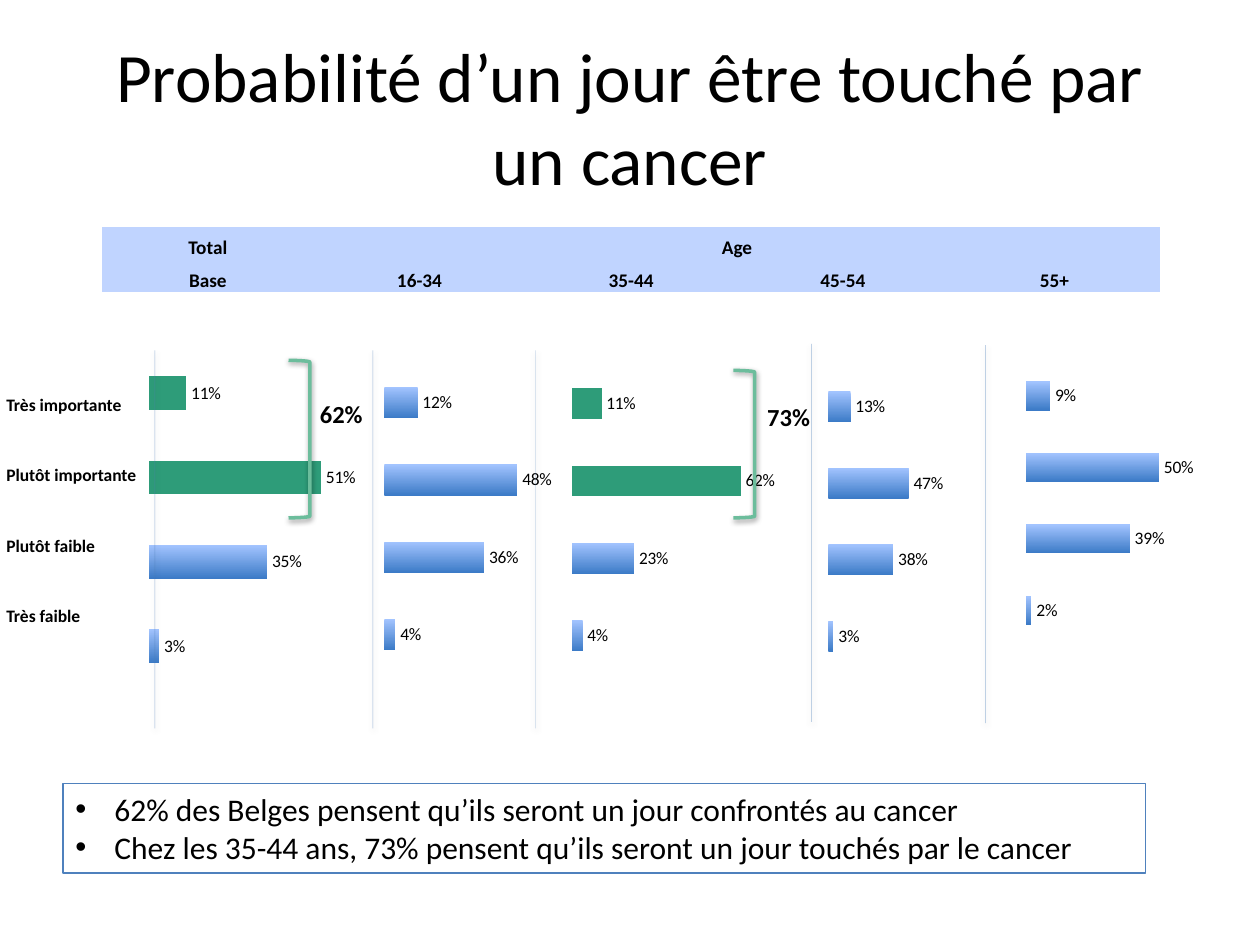
from dataclasses import dataclass
from lxml.etree import SubElement
from pptx import Presentation
from pptx.chart.data import CategoryChartData
from pptx.dml.color import RGBColor
from pptx.enum.chart import XL_CHART_TYPE, XL_LABEL_POSITION
from pptx.enum.shapes import MSO_CONNECTOR, MSO_SHAPE
from pptx.enum.text import MSO_ANCHOR, PP_ALIGN
from pptx.oxml import parse_xml
from pptx.oxml.ns import nsdecls, qn
from pptx.util import Inches, Pt


@dataclass
class Theme:
    font: str = "Calibri"
    ink: str = "000000"
    white: str = "FFFFFF"
    band: str = "C0D4FF"
    blue: str = "4F81BD"
    light: str = "A3C4FF"
    deep: str = "3C7BC7"
    green: str = "2E9C79"
    mint: str = "6CBD9C"
    title: float = 39.6
    body: float = 18
    total: float = 14
    head: float = 11
    small: float = 10


def assign(item, values):
    for name, value in values.items():
        setattr(item, name, value)


def color(code):
    return RGBColor.from_string(code)


def lengths(values):
    return [Inches(value) for value in values]


class Deck:
    def __init__(self, slide, theme):
        self.slide = slide
        self.theme = theme

    def style(self, font, size, bold=False):
        assign(font, {"name": self.theme.font, "size": Pt(size), "bold": bold})
        font.color.rgb = color(self.theme.ink)

    def label(self, frame, lines, size, bold=False, align=PP_ALIGN.LEFT):
        frame.text = "\n".join(lines)
        for para in frame.paragraphs:
            para.alignment = align
            self.style(para.runs[0].font, size, bold)

    def text(self, place, words, size, bold=False, align=PP_ALIGN.LEFT,
             anchor=MSO_ANCHOR.TOP):
        frame = self.slide.shapes.add_textbox(*lengths(place)).text_frame
        assign(frame, {"word_wrap": True, "vertical_anchor": anchor})
        self.label(frame, [words], size, bold, align)

    def table(self, place, rows, size, fill, align):
        frame = self.slide.shapes.add_table(len(rows), len(rows[0]), *lengths(place))
        table = frame.table
        assign(table, {"first_row": False, "horz_banding": False})
        table._tbl.tblPr.find(qn("a:tableStyleId")).text = (
            "{2D5ABB26-0587-4C30-8999-92F81FD0307C}")
        pad = {"margin_left": Inches(0.01), "margin_right": Inches(0.01),
               "margin_top": Inches(0.01), "margin_bottom": 0,
               "vertical_anchor": MSO_ANCHOR.BOTTOM}
        for r, row in enumerate(rows):
            for c, words in enumerate(row):
                cell = table.cell(r, c)
                assign(cell, pad)
                cell.fill.solid()
                cell.fill.fore_color.rgb = color(fill)
                if words:
                    self.label(cell.text_frame, [words], size, True, align)
        return table

    def chart(self, place, plot, values, top, marked):
        data = CategoryChartData()
        data.categories = ["1", "2", "3", "4"]
        data.add_series("Series 1", values)
        chart = self.slide.shapes.add_chart(
            XL_CHART_TYPE.BAR_CLUSTERED, *lengths(place), data).chart
        assign(chart, {"has_legend": False, "has_title": False})
        self.style(chart.font, self.theme.small)
        assign(chart.category_axis, {"visible": False, "reverse_order": True})
        assign(chart.value_axis, {
            "visible": False, "has_major_gridlines": False,
            "minimum_scale": 0, "maximum_scale": top})
        bars = chart.plots[0]
        assign(bars, {"gap_width": 150, "vary_by_categories": False,
                      "has_data_labels": True})
        assign(bars.data_labels, {
            "show_value": True, "number_format": "0\\%",
            "number_format_is_linked": False,
            "position": XL_LABEL_POSITION.OUTSIDE_END})
        series = bars.series[0]
        fill = series.format.fill
        fill.gradient()
        fill.gradient_angle = 270
        for stop, code in zip(fill.gradient_stops, (self.theme.light, self.theme.deep)):
            stop.color.rgb = color(code)
        for index in marked:
            fill = series.points[index].format.fill
            fill.solid()
            fill.fore_color.rgb = color(self.theme.green)
        self.layout(chart, plot)

    def layout(self, chart, plot):
        area = chart._chartSpace.chart.plotArea
        for old in area.findall(qn("c:layout")):
            area.remove(old)
        sizes = "".join(f'<c:{key} val="{value}"/>' for key, value in zip("xywh", plot))
        area.insert(0, parse_xml(
            f'<c:layout {nsdecls("c")}><c:manualLayout><c:layoutTarget val="inner"/>'
            f'<c:xMode val="edge"/><c:yMode val="edge"/>{sizes}'
            "</c:manualLayout></c:layout>"))

    def shade(self, shape):
        shape._element.spPr.append(parse_xml(
            f'<a:effectLst {nsdecls("a")}><a:outerShdw blurRad="40000" dist="20000" '
            'dir="5400000" rotWithShape="0"><a:srgbClr val="000000">'
            '<a:alpha val="38000"/></a:srgbClr></a:outerShdw></a:effectLst>'))

    def stroke(self, shape, code, width):
        shape.line.color.rgb = color(code)
        shape.line.width = Pt(width)

    def rule(self, x, top, bottom):
        line = self.slide.shapes.add_connector(
            MSO_CONNECTOR.STRAIGHT, *lengths((x, top, x, bottom)))
        self.stroke(line, self.theme.blue, 0.25)
        tint = line._element.spPr.find(".//" + qn("a:srgbClr"))
        SubElement(tint, qn("a:alpha")).set("val", "52000")
        self.shade(line)

    def bracket(self, place):
        shape = self.slide.shapes.add_shape(MSO_SHAPE.RIGHT_BRACKET, *lengths(place))
        shape.fill.background()
        self.stroke(shape, self.theme.mint, 2)
        self.shade(shape)

    def bullets(self, place, lines):
        box = self.slide.shapes.add_shape(MSO_SHAPE.RECTANGLE, *lengths(place))
        box.shadow.inherit = False
        box.fill.background()
        self.stroke(box, self.theme.blue, 0.75)
        frame = box.text_frame
        assign(frame, {"word_wrap": True, "vertical_anchor": MSO_ANCHOR.TOP})
        self.label(frame, lines, self.theme.body)
        indent = Inches(0.31)
        for para in frame.paragraphs:
            props = para._p.get_or_add_pPr()
            props.set("marL", str(indent))
            props.set("indent", str(-indent))
            SubElement(props, qn("a:buFont")).set("typeface", "Arial")
            SubElement(props, qn("a:buChar")).set("char", "•")


def main():
    show = Presentation()
    assign(show, {"slide_width": Inches(10), "slide_height": Inches(7.5)})
    theme = Theme()
    deck = Deck(show.slides.add_slide(show.slide_layouts[6]), theme)
    deck.text((0.5, 0.3, 9, 1.25), "Probabilité d’un jour être touché par un cancer",
              theme.title, align=PP_ALIGN.CENTER, anchor=MSO_ANCHOR.MIDDLE)
    ages = deck.table((0.81, 1.8, 8.4, 0.52),
                      [["Total", "Age", "", "", ""],
                       ["Base", "16-34", "35-44", "45-54", "55+"]],
                      theme.head, theme.band, PP_ALIGN.CENTER)
    ages.cell(0, 1).merge(ages.cell(0, 4))
    deck.table((0.04, 2.74, 1.11, 2.24),
               [["Très importante"], ["Plutôt importante"],
                ["Plutôt faible"], ["Très faible"]],
               theme.small, theme.white, PP_ALIGN.LEFT)
    charts = [
        ((1.15, 2.73, 1.69, 2.79), (0.02, 0.02, 0.95, 0.96), (11, 51, 35, 3), 60, (0, 1)),
        ((2.87, 2.86, 1.51, 2.79), (0.12, 0.01, 0.88, 0.88), (12, 48, 36, 4), 60, ()),
        ((4.38, 2.73, 1.77, 2.79), (0.09, 0.06, 0.91, 0.88), (11, 62, 23, 4), 73, (0, 1)),
        ((6.4, 2.73, 1.74, 2.79), (0.1, 0.07, 0.39, 0.87), (13, 47, 38, 3), 50, ()),
        ((8.01, 2.78, 1.49, 2.58), (0.09, 0.03, 0.85, 0.88), (9, 50, 39, 2), 60, ()),
    ]
    for chart in charts:
        deck.chart(*chart)
    for x, top in ((1.23, 2.78), (2.96, 2.78), (4.25, 2.78), (6.44, 2.73), (7.82, 2.74)):
        deck.rule(x, top, top + 3)
    for place in ((2.29, 2.86, 0.17, 1.25), (5.82, 2.94, 0.17, 1.17)):
        deck.bracket(place)
    for x, y, words in ((2.44, 3.12, "62%"), (5.99, 3.14, "73%")):
        deck.text((x, y, 0.61, 0.34), words, theme.total, True)
    deck.bullets((0.5, 6.22, 8.59, 0.71), [
        "62% des Belges pensent qu’ils seront un jour confrontés au cancer",
        "Chez les 35-44 ans, 73% pensent qu’ils seront un jour touchés par le cancer"])
    show.save("out.pptx")


if __name__ == "__main__":
    main()
